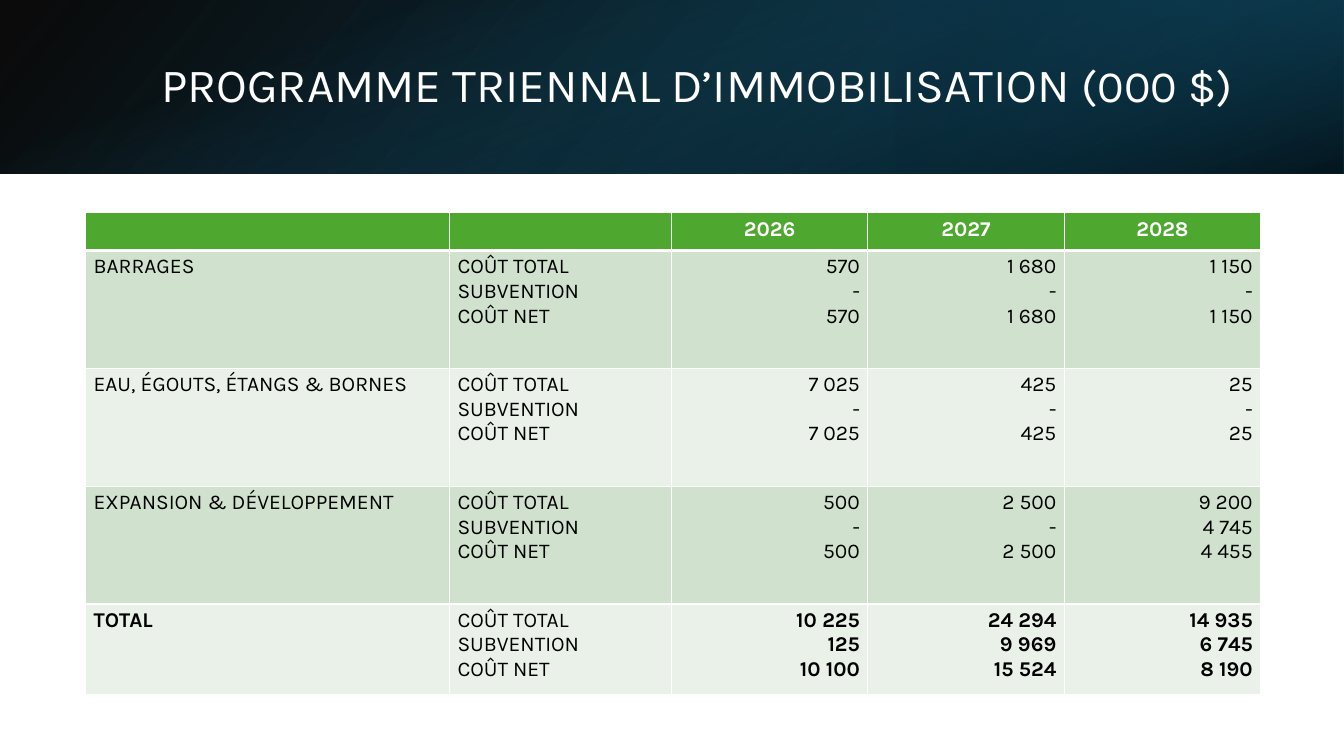
from dataclasses import dataclass

from lxml import etree
from pptx import Presentation
from pptx import util as u
from pptx.dml import color
from pptx.enum import shapes, text
from pptx.oxml import ns, parse_xml


@dataclass(frozen=True)
class Theme:
    font: str = "Karla"
    white: str = "FFFFFF"
    ink: str = "000000"
    night: str = "0B3041"
    navy: str = "104862"
    teal: str = "156082"
    header: str = "4EA72E"
    bands: tuple[str, str] = ("D0E1CD", "E9F1E8")
    title_size: int = 34
    unit_size: int = 32
    table_size: int = 15


@dataclass(frozen=True)
class Stop:
    position: int
    rgb: str
    opacity: int = 100


@dataclass(frozen=True)
class Veil:
    left: float
    top: float
    width: float
    height: float
    angle: int
    stops: tuple[Stop, Stop]
    rotation: int = 0
    flipped: bool = False


@dataclass(frozen=True)
class Programme:
    label: str
    years: tuple[tuple[str, str, str], ...]
    height: float = 2.97
    bold: bool = False


THEME = Theme()
SLIDE_W, SLIDE_H, BANNER_H = 33.87, 19.05, 4.37
TURNED_LEFT = (SLIDE_W - BANNER_H) / 2
LEFT, CENTER, RIGHT = text.PP_ALIGN.LEFT, text.PP_ALIGN.CENTER, text.PP_ALIGN.RIGHT

VEILS = (
    Veil(0, 0, SLIDE_W, BANNER_H, angle=140, flipped=True,
         stops=(Stop(0, THEME.ink, 96), Stop(100, THEME.navy))),
    Veil(SLIDE_W * 2 / 3, 0, SLIDE_W / 3, BANNER_H, angle=320, rotation=180, flipped=True,
         stops=(Stop(19, THEME.night, 68), Stop(100, THEME.teal, 79))),
    Veil(TURNED_LEFT, -TURNED_LEFT, BANNER_H, SLIDE_W, angle=340, rotation=90,
         stops=(Stop(23, THEME.teal, 0), Stop(99, THEME.ink, 74))),
)

YEARS = ("2026", "2027", "2028")
COSTS = ("COÛT TOTAL", "SUBVENTION", "COÛT NET")
TABLE_LEFT, TABLE_TOP = 2.16, 5.36
LABEL_W, COST_W, YEAR_W = 9.17, 5.59, 4.95
COLUMN_WIDTHS = (LABEL_W, COST_W, *(YEAR_W for _ in YEARS))
HEADER_H = 0.95
PROGRAMMES = (
    Programme("BARRAGES",
              (("570", "-", "570"), ("1 680", "-", "1 680"), ("1 150", "-", "1 150"))),
    Programme("EAU, ÉGOUTS, ÉTANGS & BORNES",
              (("7 025", "-", "7 025"), ("425", "-", "425"), ("25", "-", "25"))),
    Programme("EXPANSION & DÉVELOPPEMENT",
              (("500", "-", "500"), ("2 500", "-", "2 500"), ("9 200", "4 745", "4 455"))),
    Programme("TOTAL",
              (("10 225", "125", "10 100"), ("24 294", "9 969", "15 524"),
               ("14 935", "6 745", "8 190")), height=2.29, bold=True),
)


def add_run(paragraph, words: str, size: int, rgb: str, bold: bool = False) -> None:
    run = paragraph.add_run()
    run.text = words
    run.font.name = THEME.font
    run.font.size = u.Pt(size)
    run.font.bold = bold
    run.font.color.rgb = color.RGBColor.from_string(rgb)


def draw_veil(slide, veil: Veil) -> None:
    panel = slide.shapes.add_shape(
        shapes.MSO_SHAPE.RECTANGLE,
        u.Cm(veil.left), u.Cm(veil.top), u.Cm(veil.width), u.Cm(veil.height))
    panel.shadow.inherit = False
    panel.line.fill.background()
    panel.rotation = veil.rotation
    properties = panel._element.spPr
    if veil.flipped:
        properties.find(ns.qn("a:xfrm")).set("flipH", "1")
    stops = "".join(
        f'<a:gs pos="{stop.position * 1000}"><a:srgbClr val="{stop.rgb}">'
        f'<a:alpha val="{stop.opacity * 1000}"/></a:srgbClr></a:gs>' for stop in veil.stops)
    properties.find(ns.qn("a:prstGeom")).addnext(parse_xml(
        f'<a:gradFill {ns.nsdecls("a")} rotWithShape="1"><a:gsLst>{stops}</a:gsLst>'
        f'<a:lin ang="{veil.angle * 60000}" scaled="0"/></a:gradFill>'))


def draw_title(slide) -> None:
    title = slide.shapes.title
    title.left, title.top = u.Cm(3.81), u.Cm(0.97)
    title.width, title.height = u.Cm(27.89), u.Cm(2.44)
    frame = title.text_frame
    frame.auto_size = text.MSO_AUTO_SIZE.NONE
    frame.vertical_anchor = text.MSO_ANCHOR.MIDDLE
    heading = frame.paragraphs[0]
    heading.alignment = LEFT
    heading.line_spacing = 0.9
    add_run(heading, "PROGRAMME TRIENNAL D’IMMOBILISATION ", THEME.title_size, THEME.white)
    add_run(heading, "(000 $)", THEME.unit_size, THEME.white)
    front_veil = slide.shapes[-1]
    front_veil._element.addnext(title._element)


def set_borders(cell, bottom: int) -> None:
    properties = cell._tc.get_or_add_tcPr()
    side_widths = {"lnL": 1, "lnR": 1, "lnT": 1, "lnB": bottom}
    for index, (side, points) in enumerate(side_widths.items()):
        border = etree.Element(ns.qn(f"a:{side}"), w=str(u.Pt(points)))
        fill = etree.SubElement(border, ns.qn("a:solidFill"))
        etree.SubElement(fill, ns.qn("a:srgbClr"), val=THEME.white)
        properties.insert(index, border)


def fill_cell(cell, lines: tuple[str, ...], alignment, fill: str, rgb: str,
              bold: bool = False, bottom: int = 1) -> None:
    cell.fill.solid()
    cell.fill.fore_color.rgb = color.RGBColor.from_string(fill)
    cell.margin_left = cell.margin_right = u.Cm(0.2)
    cell.margin_top = cell.margin_bottom = u.Cm(0.1)
    set_borders(cell, bottom)
    frame = cell.text_frame
    for index, line in enumerate(lines):
        paragraph = frame.add_paragraph() if index else frame.paragraphs[0]
        paragraph.alignment = alignment
        add_run(paragraph, line, THEME.table_size, rgb, bold)
    if not lines:
        ending = frame.paragraphs[0]._p.get_or_add_endParaRPr()
        ending.set("sz", str(THEME.table_size * 100))


def draw_table(slide) -> None:
    heights = (HEADER_H, *(programme.height for programme in PROGRAMMES))
    table = slide.shapes.add_table(
        len(heights), len(COLUMN_WIDTHS), u.Cm(TABLE_LEFT), u.Cm(TABLE_TOP),
        u.Cm(sum(COLUMN_WIDTHS)), u.Cm(sum(heights))).table
    table.horz_banding = False
    for column, width in zip(table.columns, COLUMN_WIDTHS):
        column.width = u.Cm(width)
    for row, height in zip(table.rows, heights):
        row.height = u.Cm(height)

    header_row, *programme_rows = table.rows
    headings = ((), (), *((year,) for year in YEARS))
    for cell, heading in zip(header_row.cells, headings):
        fill_cell(cell, heading, CENTER, THEME.header, THEME.white, bold=True, bottom=3)
    for number, (row, programme) in enumerate(zip(programme_rows, PROGRAMMES)):
        band = THEME.bands[number % len(THEME.bands)]
        label, costs, *amounts = row.cells
        fill_cell(label, (programme.label,), LEFT, band, THEME.ink, programme.bold)
        fill_cell(costs, COSTS, LEFT, band, THEME.ink)
        for cell, values in zip(amounts, programme.years):
            fill_cell(cell, values, RIGHT, band, THEME.ink, programme.bold)


def main() -> None:
    deck = Presentation()
    deck.slide_width, deck.slide_height = u.Cm(SLIDE_W), u.Cm(SLIDE_H)
    title_only = deck.slide_layouts[5]
    slide = deck.slides.add_slide(title_only)
    for veil in VEILS:
        draw_veil(slide, veil)
    draw_title(slide)
    draw_table(slide)
    deck.save("out.pptx")


if __name__ == "__main__":
    main()
